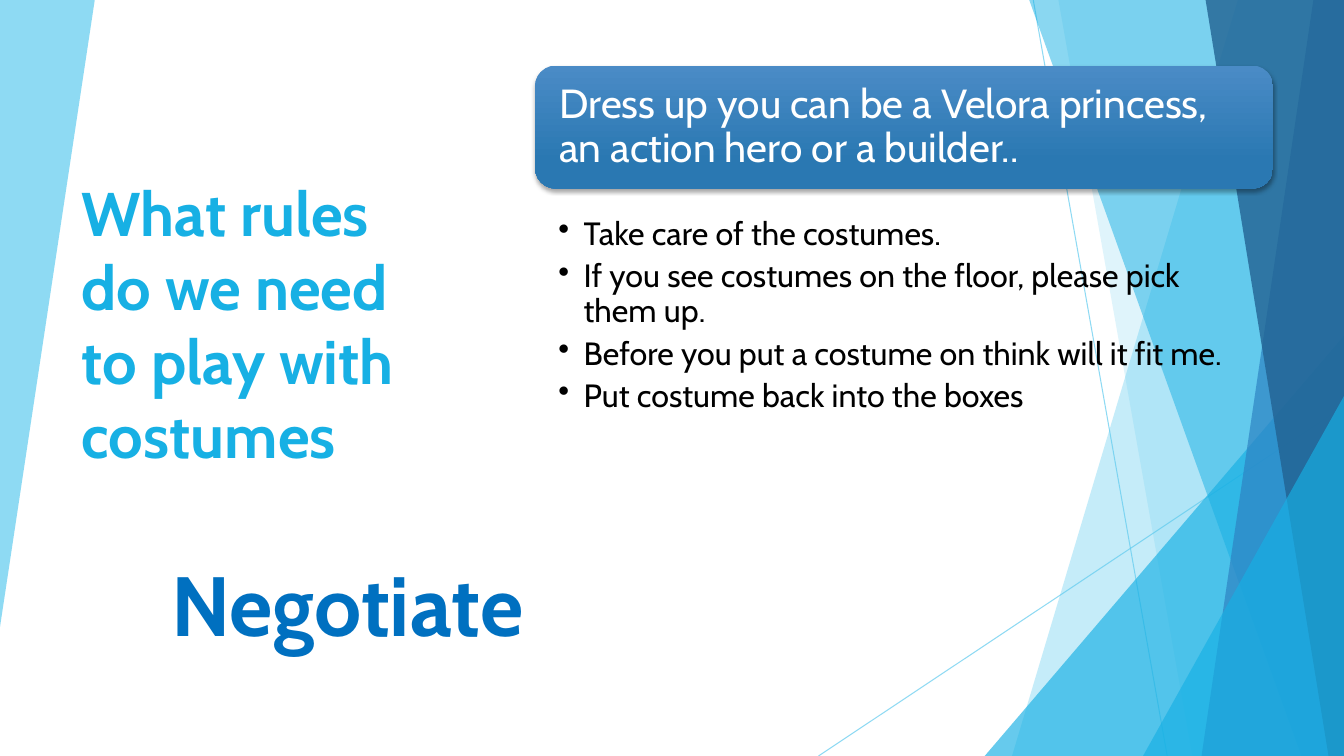
from lxml.etree import SubElement
from pptx import Presentation
from pptx.dml.color import RGBColor
from pptx.enum.shapes import MSO_CONNECTOR, MSO_SHAPE
from pptx.enum.text import MSO_ANCHOR, PP_ALIGN
from pptx.oxml.ns import qn
from pptx.util import Inches, Pt

SLIDE_WIDTH = Inches(13.33)
SLIDE_HEIGHT = Inches(7.5)
FONT = "Cabin"

SKY = RGBColor(0x5F, 0xCB, 0xEF)
CYAN = RGBColor(0x17, 0xB0, 0xE4)
STEEL = RGBColor(0x2E, 0x83, 0xC3)
NAVY = RGBColor(0x22, 0x62, 0x92)
CARD_TOP = RGBColor(0x4A, 0x8B, 0xC6)
CARD_BOTTOM = RGBColor(0x2A, 0x78, 0xB2)
BLUE = RGBColor(0x00, 0x70, 0xC0)
WHITE = RGBColor(0xFF, 0xFF, 0xFF)
BLACK = RGBColor(0x00, 0x00, 0x00)

CARD_LEFT, CARD_WIDTH = 39.82, 54.9
RULES = (
    "Take care of the costumes.",
    "If you see costumes on the floor, please pick them up.",
    "Before you put a costume on think will it fit me.",
    "Put costume back into the boxes",
)


def across(percent):
    return round(SLIDE_WIDTH * percent / 100)


def down(percent):
    return round(SLIDE_HEIGHT * percent / 100)


def box(left, top, width, height):
    return across(left), down(top), across(width), down(height)


def set_opacity(color_format_parent, opacity):
    for color in color_format_parent.iter(qn("a:srgbClr")):
        SubElement(color, qn("a:alpha"), val=str(opacity * 1000))


def paint(shape, color, opacity):
    shape.fill.solid()
    shape.fill.fore_color.rgb = color
    set_opacity(shape.fill._xPr, opacity)
    shape.line.fill.background()
    shape.shadow.inherit = False


def add_shard(slide, points, color, opacity):
    corners = [(across(x), down(y)) for x, y in points]
    builder = slide.shapes.build_freeform(*corners[0], scale=1.0)
    builder.add_line_segments(corners[1:], close=True)
    paint(builder.convert_to_shape(), color, opacity)


def add_right_shard(slide, top_left, bottom_left, color, opacity):
    points = ((top_left, 0), (100, 0), (100, 100), (bottom_left, 100))
    add_shard(slide, points, color, opacity)


def add_corner_triangle(slide, left, top):
    triangle = slide.shapes.add_shape(
        MSO_SHAPE.ISOSCELES_TRIANGLE, *box(left, top, 100 - left, 100 - top))
    triangle.adjustments[0] = 1
    paint(triangle, CYAN, 66)


def add_ray(slide, start, end):
    ray = slide.shapes.add_connector(
        MSO_CONNECTOR.STRAIGHT,
        across(start[0]), down(start[1]), across(end[0]), down(end[1]))
    ray.line.color.rgb = SKY
    ray.line.width = Pt(0.75)
    properties = ray._element.spPr
    set_opacity(properties, 70)
    SubElement(properties, qn("a:effectLst"))


def add_facets(slide):
    add_shard(slide, ((0, 0), (7.05, 0), (0, 82.93)), SKY, 70)
    add_ray(slide, (76.88, 0), (86.85, 100))
    add_ray(slide, (100, 53.73), (60.9, 100))
    add_right_shard(slide, 92.1, 75.3, SKY, 36)
    add_right_shard(slide, 78.75, 88.72, SKY, 20)
    add_corner_triangle(slide, 73.27, 44.4)
    add_right_shard(slide, 76.58, 96.82, CYAN, 50)
    add_right_shard(slide, 97.72, 89.4, STEEL, 70)
    add_right_shard(slide, 89.7, 98.85, NAVY, 80)
    add_corner_triangle(slide, 85.05, 52.4)


def write(shape, lines, size, color, bold=False, align=PP_ALIGN.LEFT,
          anchor=MSO_ANCHOR.TOP, spacing=1.0, after=0):
    frame = shape.text_frame
    frame.word_wrap = True
    frame.vertical_anchor = anchor
    frame.text = "\n".join(lines)
    for paragraph in frame.paragraphs:
        paragraph.alignment = align
        paragraph.line_spacing = spacing
        paragraph.space_after = Pt(after)
        font = paragraph.runs[0].font
        font.name, font.size, font.bold = FONT, Pt(size), bold
        font.color.rgb = color
    return frame


def set_insets(frame, horizontal, vertical):
    frame.margin_left = frame.margin_right = across(horizontal)
    frame.margin_top = frame.margin_bottom = down(vertical)


def add_bullets(frame):
    indent = across(1.88)
    for paragraph in frame.paragraphs:
        properties = paragraph._p.get_or_add_pPr()
        properties.set("marL", str(indent))
        properties.set("indent", str(-indent))
        SubElement(properties, qn("a:buChar"), char="•")


def add_soft_shadow(shape):
    shape.shadow.inherit = False
    effects = shape._element.spPr.find(qn("a:effectLst"))
    shadow = SubElement(effects, qn("a:outerShdw"), blurRad=str(Pt(3)),
                        dist=str(Pt(2)), dir="5400000", rotWithShape="0")
    color = SubElement(shadow, qn("a:srgbClr"), val=str(BLACK))
    SubElement(color, qn("a:alpha"), val="35000")


def add_card(slide, text):
    card = slide.shapes.add_shape(
        MSO_SHAPE.ROUNDED_RECTANGLE, *box(CARD_LEFT, 8.67, CARD_WIDTH, 16.27))
    card.fill.gradient()
    card.fill.gradient_angle = 270
    stops = zip(card.fill.gradient_stops, (CARD_TOP, CARD_BOTTOM), (0, 0.78))
    for stop, color, position in stops:
        stop.color.rgb = color
        stop.position = position
    card.line.fill.background()
    add_soft_shadow(card)
    frame = write(card, [text], 29, WHITE, anchor=MSO_ANCHOR.MIDDLE, spacing=0.9)
    set_insets(frame, 1.35, 2.4)


def main():
    presentation = Presentation()
    presentation.slide_width = SLIDE_WIDTH
    presentation.slide_height = SLIDE_HEIGHT
    slide = presentation.slides.add_slide(presentation.slide_layouts[6])

    add_facets(slide)
    title = slide.shapes.add_textbox(*box(5.33, 12.8, 29.1, 59.73))
    write(title, ["What rules do we need to play with costumes"], 44, CYAN,
          bold=True, anchor=MSO_ANCHOR.MIDDLE, after=6)
    add_card(slide, "Dress up you can be a Velora princess, "
                    "an action hero or a builder..")
    rules = slide.shapes.add_textbox(*box(CARD_LEFT, 28.27, CARD_WIDTH, 47.33))
    frame = write(rules, RULES, 23, BLACK, spacing=0.9, after=5.5)
    set_insets(frame, 1.73, 0.53)
    add_bullets(frame)
    footer = slide.shapes.add_textbox(*box(0.82, 72.4, 50.03, 14.8))
    write(footer, ["Negotiate"], 60, BLUE, bold=True, align=PP_ALIGN.CENTER)

    presentation.save("out.pptx")


if __name__ == "__main__":
    main()
